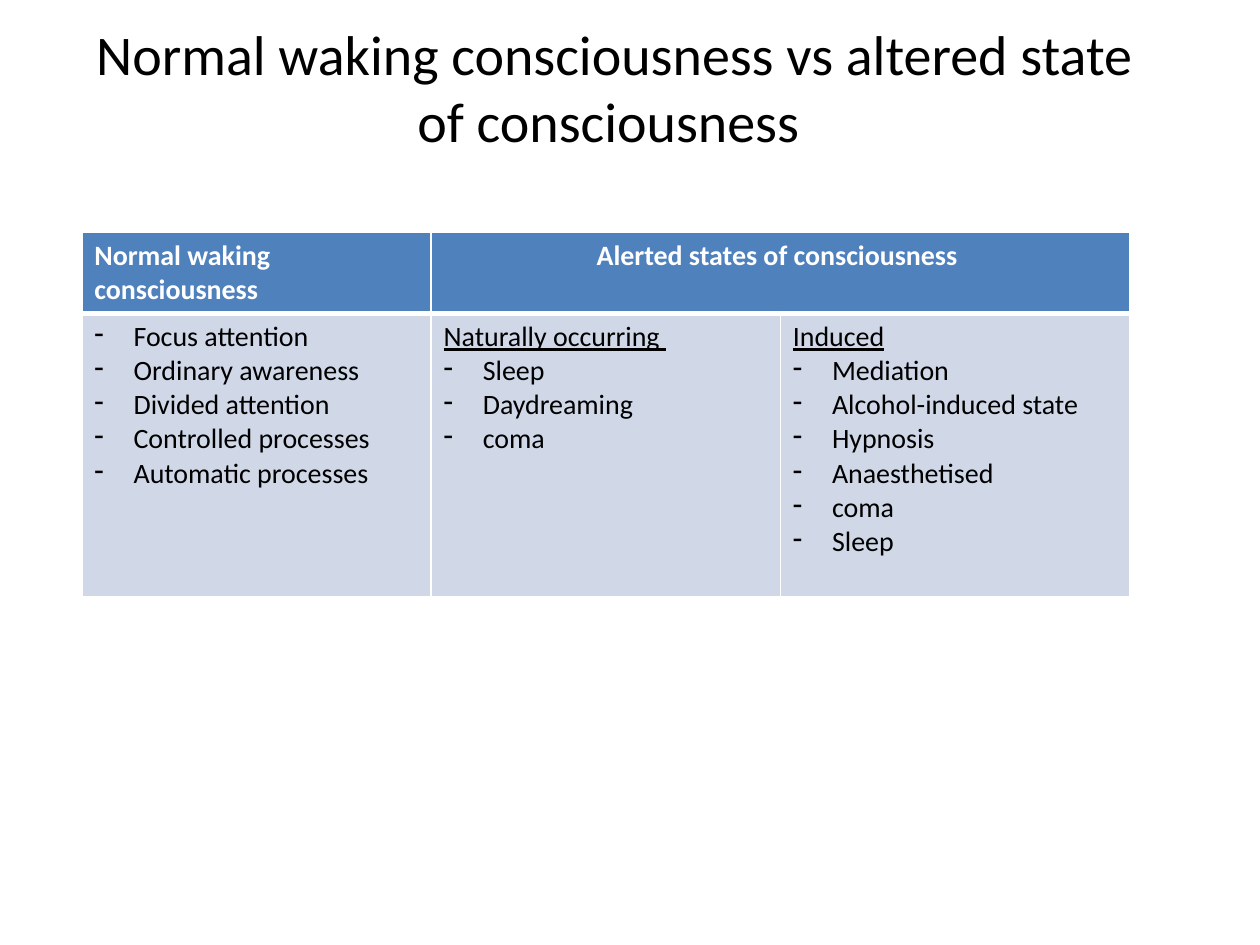
from lxml.etree import SubElement
from pptx import Presentation
from pptx.dml.color import RGBColor
from pptx.enum.text import MSO_ANCHOR as Anchor, MSO_AUTO_SIZE as AutoSize, PP_ALIGN as Align
from pptx.oxml.ns import qn
from pptx.util import Cm, Pt

BLACK = RGBColor(0x00, 0x00, 0x00)
WHITE = RGBColor(0xFF, 0xFF, 0xFF)
HEADER_BLUE = RGBColor(0x4F, 0x81, 0xBD)
BODY_BLUE = RGBColor(0xD0, 0xD8, 0xE8)

HEADERS = ["Normal waking consciousness", "Alerted states of consciousness "]
COLUMNS = [
    (None, ["Focus attention", "Ordinary awareness", "Divided attention",
            "Controlled processes", "Automatic processes"]),
    ("Naturally occurring ", ["Sleep", "Daydreaming", "coma"]),
    ("Induced", ["Mediation", "Alcohol-induced state", "Hypnosis",
                 "Anaesthetised", "coma", "Sleep"]),
]


class SlideBuilder:
    font_name = "Calibri"
    title_size = Pt(32)
    table_size = Pt(16)
    indent = Cm(0.79)

    def __init__(self, slide):
        self.slide = slide

    def style(self, paragraph, size, color, bold=False, underline=False):
        font = paragraph.font
        font.name, font.size = self.font_name, size
        font.bold, font.underline = bold, underline
        font.color.rgb = color

    def title(self, text, left, top, width, height):
        title = self.slide.shapes.title
        title.left, title.top, title.width, title.height = left, top, width, height
        frame = title.text_frame
        frame.text = text
        frame.word_wrap = True
        frame.auto_size = AutoSize.NONE
        frame.vertical_anchor = Anchor.MIDDLE
        paragraph = frame.paragraphs[0]
        paragraph.alignment = Align.CENTER
        self.style(paragraph, self.title_size, BLACK)

    def table(self, left, top, column_width, row_heights, columns):
        frame = self.slide.shapes.add_table(
            len(row_heights), columns, left, top,
            column_width * columns, sum(row_heights))
        table = frame.table
        table.first_row = table.horz_banding = False
        for column in table.columns:
            column.width = column_width
        for row, height in zip(table.rows, row_heights):
            row.height = height
        return table

    def cell(self, cell, fill, top_border, bottom_border):
        properties = cell._tc.get_or_add_tcPr()
        borders = {"lnL": Pt(1), "lnR": Pt(1), "lnT": top_border, "lnB": bottom_border}
        for side, width in borders.items():
            line = SubElement(properties, qn(f"a:{side}"), w=str(width))
            solid = SubElement(line, qn("a:solidFill"))
            SubElement(solid, qn("a:srgbClr"), val=str(WHITE))
        cell.fill.solid()
        cell.fill.fore_color.rgb = fill

    def header(self, cell, text, alignment):
        cell.text = text
        paragraph = cell.text_frame.paragraphs[0]
        paragraph.alignment = alignment
        self.style(paragraph, self.table_size, WHITE, bold=True)

    def dash(self, paragraph):
        properties = paragraph._p.get_or_add_pPr()
        properties.set("marL", str(self.indent))
        properties.set("indent", str(-self.indent))
        bullet = properties.makeelement(qn("a:buChar"), {"char": "-"})
        properties.insert(0, bullet)

    def dash_list(self, cell, heading, items):
        lines = ([heading] if heading else []) + items
        cell.text = "\n".join(lines)
        for index, paragraph in enumerate(cell.text_frame.paragraphs):
            is_heading = bool(heading) and index == 0
            if not is_heading:
                self.dash(paragraph)
            self.style(paragraph, self.table_size, BLACK, underline=is_heading)


def main():
    presentation = Presentation()
    presentation.slide_width, presentation.slide_height = Cm(25.4), Cm(19.05)
    slide = presentation.slides.add_slide(presentation.slide_layouts[5])
    builder = SlideBuilder(slide)

    builder.title("Normal waking consciousness vs altered state of consciousness ",
                  Cm(1.27), Cm(0.76), Cm(22.25), Cm(1.98))

    table = builder.table(Cm(1.65), Cm(4.68), Cm(7.04), [Cm(1.62), Cm(5.72)], len(COLUMNS))
    for column, (heading, items) in enumerate(COLUMNS):
        builder.cell(table.cell(0, column), HEADER_BLUE, Pt(1), Pt(3))
        builder.cell(table.cell(1, column), BODY_BLUE, Pt(3), Pt(1))
        builder.dash_list(table.cell(1, column), heading, items)
    table.cell(0, 1).merge(table.cell(0, 2))
    for column, (text, alignment) in enumerate(zip(HEADERS, [Align.LEFT, Align.CENTER])):
        builder.header(table.cell(0, column), text, alignment)

    presentation.save("out.pptx")


if __name__ == "__main__":
    main()
